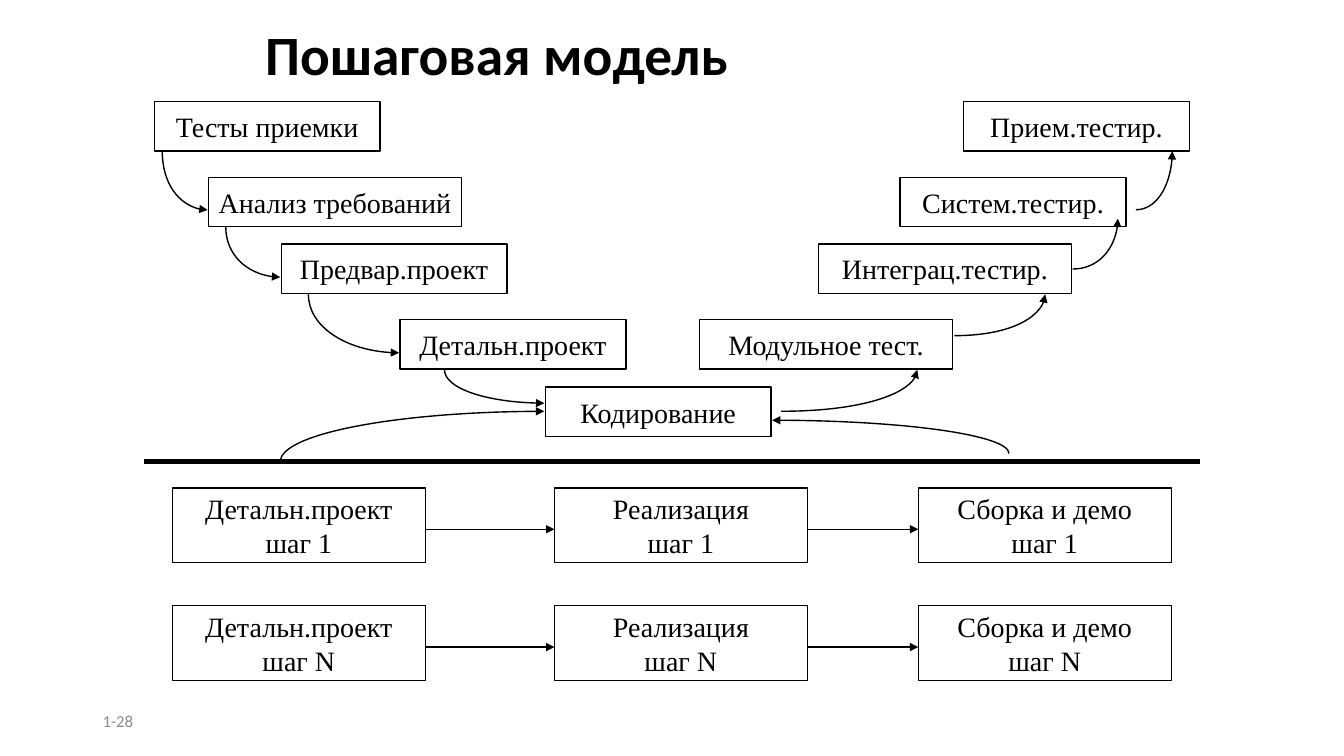
from dataclasses import dataclass

from lxml import etree
from pptx import Presentation
from pptx.dml.color import RGBColor
from pptx.enum import shapes, text
from pptx.oxml import ns
from pptx.util import Pt


@dataclass(frozen=True)
class Theme:
    ink: RGBColor = RGBColor(0, 0, 0)
    paper: RGBColor = RGBColor(255, 255, 255)
    muted: RGBColor = RGBColor(0x8C, 0x8C, 0x8C)
    head_font: str = "Calibri"
    body_font: str = "Times New Roman"
    title_size: float = 39.6
    body_size: float = 20
    note_size: float = 12
    thin: float = 1
    thick: float = 4


class Deck:
    """Holds the style and the current slide."""

    ARC = 0.55  # control point share that makes a quarter ellipse

    def __init__(self, prs, theme):
        self.theme = theme
        self.slide = prs.slides.add_slide(prs.slide_layouts[5])
        self.shapes = self.slide.shapes

    def set_text(self, tf, lines, font, size, color, align, bold=False):
        tf.auto_size = text.MSO_AUTO_SIZE.NONE
        tf.vertical_anchor = text.MSO_ANCHOR.MIDDLE
        for i, line in enumerate(lines):
            p = tf.add_paragraph() if i else tf.paragraphs[0]
            p.alignment = align
            r = p.add_run()
            r.text = line
            r.font.name, r.font.size = font, Pt(size)
            r.font.bold = bold
            r.font.color.rgb = color

    def ink_line(self, sp, width, arrow):
        sp.line.color.rgb = self.theme.ink
        sp.line.width = Pt(width)
        if arrow:
            ln = sp.line._get_or_add_ln()
            etree.SubElement(ln, ns.qn("a:tailEnd"), type="triangle")

    def title(self, words, x, y, w, h):
        t, sp = self.theme, self.shapes.title
        sp.left, sp.top, sp.width, sp.height = map(Pt, (x, y, w, h))
        self.set_text(sp.text_frame, [words], t.head_font, t.title_size, t.ink,
                      text.PP_ALIGN.LEFT, bold=True)
        sp.text_frame.paragraphs[0].line_spacing = 0.9

    def page_number(self, words, x, y, w, h):
        t = self.theme
        tf = self.shapes.add_textbox(*map(Pt, (x, y, w, h))).text_frame
        tf.word_wrap = True
        self.set_text(tf, [words], t.head_font, t.note_size, t.muted,
                      text.PP_ALIGN.LEFT)

    def box(self, lines, x, y, w, h):
        t = self.theme
        sp = self.shapes.add_shape(shapes.MSO_SHAPE.RECTANGLE, *map(Pt, (x, y, w, h)))
        sp.shadow.inherit = False
        sp.fill.solid()
        sp.fill.fore_color.rgb = t.paper
        self.ink_line(sp, t.thin, False)
        sp.text_frame.word_wrap = False
        self.set_text(sp.text_frame, lines, t.body_font, t.body_size, t.ink,
                      text.PP_ALIGN.CENTER)

    def line(self, x1, y1, x2, y2, width, arrow=False):
        c = self.shapes.add_connector(shapes.MSO_CONNECTOR.STRAIGHT,
                                      *map(Pt, (x1, y1, x2, y2)))
        self.ink_line(c, width, arrow)
        etree.SubElement(c._element.spPr, ns.qn("a:effectLst"))

    def curve(self, x1, y1, x2, y2, flat_start=False):
        """Quarter ellipse with an arrow; leaves vertically unless flat_start."""
        start, end = (Pt(x1), Pt(y1)), (Pt(x2), Pt(y2))
        builder = self.shapes.build_freeform(*start)
        builder.add_line_segments([end], close=False)
        sp = builder.convert_to_shape()
        sp.shadow.inherit = False
        sp.fill.background()
        self.ink_line(sp, self.theme.thin, True)
        # Bend the straight segment towards the corner
        corner = (end[0], start[1]) if flat_start else (start[0], end[1])
        bend = [[a + self.ARC * (c - a) for a, c in zip(tip, corner)]
                for tip in (start, end)]
        straight = sp._element.find(".//" + ns.qn("a:lnTo"))
        cubic = etree.Element(ns.qn("a:cubicBezTo"))
        for x, y in (*bend, end):
            etree.SubElement(cubic, ns.qn("a:pt"),
                             x=str(round(x - sp.left)), y=str(round(y - sp.top)))
        straight.getparent().replace(straight, cubic)


NARROW, WIDE = 161.3, 180.7
STAGE_H, STEP_H = 35.3, 53.3
LEVELS = (72.7, 126.7, 174.2, 228.2, 276.5)

# Label, left, level, width
STAGES = [
    ("Тесты приемки", 110.2, 0, NARROW),
    ("Анализ требований", 149, 1, WIDE),
    ("Предвар.проект", 200.9, 2, NARROW),
    ("Детальн.проект", 285.8, 3, NARROW),
    ("Кодирование", 389.5, 4, NARROW),
    ("Модульное тест.", 499.7, 3, WIDE),
    ("Интеграц.тестир.", 584.6, 2, WIDE),
    ("Систем.тестир.", 643, 1, NARROW),
    ("Прием.тестир.", 688.3, 0, NARROW),
]
DOWNWARD = [
    (115.9, 108, 148.3, 150),
    (161.3, 162, 200.2, 198),
    (220.3, 210.2, 285.1, 252),
    (317.5, 264.2, 388.8, 288),
]
UPWARD = [
    (558, 293.8, 655.2, 264.2),
    (681.8, 239.8, 746.6, 210.2),
    (766.1, 192.2, 798.5, 156.2),
    (811.4, 149.8, 837.4, 108),
]
INTO_CODING = [(200.2, 329.8, 388.8, 293.8), (720.7, 324, 551.5, 300.2)]

STEP_COLUMNS = [("Детальн.проект", 123.1), ("Реализация", 396), ("Сборка и демо", 655.9)]
STEP_ROWS = [("шаг 1", 348.5), ("шаг N", 432.7)]
ARROW_DROP = 29.5


def main():
    prs = Presentation()
    prs.slide_width, prs.slide_height = Pt(960), Pt(540)
    theme = Theme()
    deck = Deck(prs, theme)

    # Title and page number
    deck.title("Пошаговая модель", 182.2, 17.3, 612, 48.2)
    deck.page_number("1-28", 66.2, 500.4, 216, 28.8)

    # V of stages
    for label, x, level, w in STAGES:
        deck.box([label], x, LEVELS[level], w, STAGE_H)

    # Rows of steps, joined by arrows
    for step, y in STEP_ROWS:
        for label, x in STEP_COLUMNS:
            deck.box([label, step], x, y, WIDE, STEP_H)
        for (_, x), (_, following) in zip(STEP_COLUMNS, STEP_COLUMNS[1:]):
            deck.line(x + WIDE, y + ARROW_DROP, following, y + ARROW_DROP,
                      theme.thin, arrow=True)

    # Divider
    deck.line(103, 329.8, 856.8, 329.8, theme.thick)

    # Curved arrows
    for ends in DOWNWARD + INTO_CODING:
        deck.curve(*ends)
    for ends in UPWARD:
        deck.curve(*ends, flat_start=True)

    prs.save("out.pptx")


if __name__ == "__main__":
    main()
